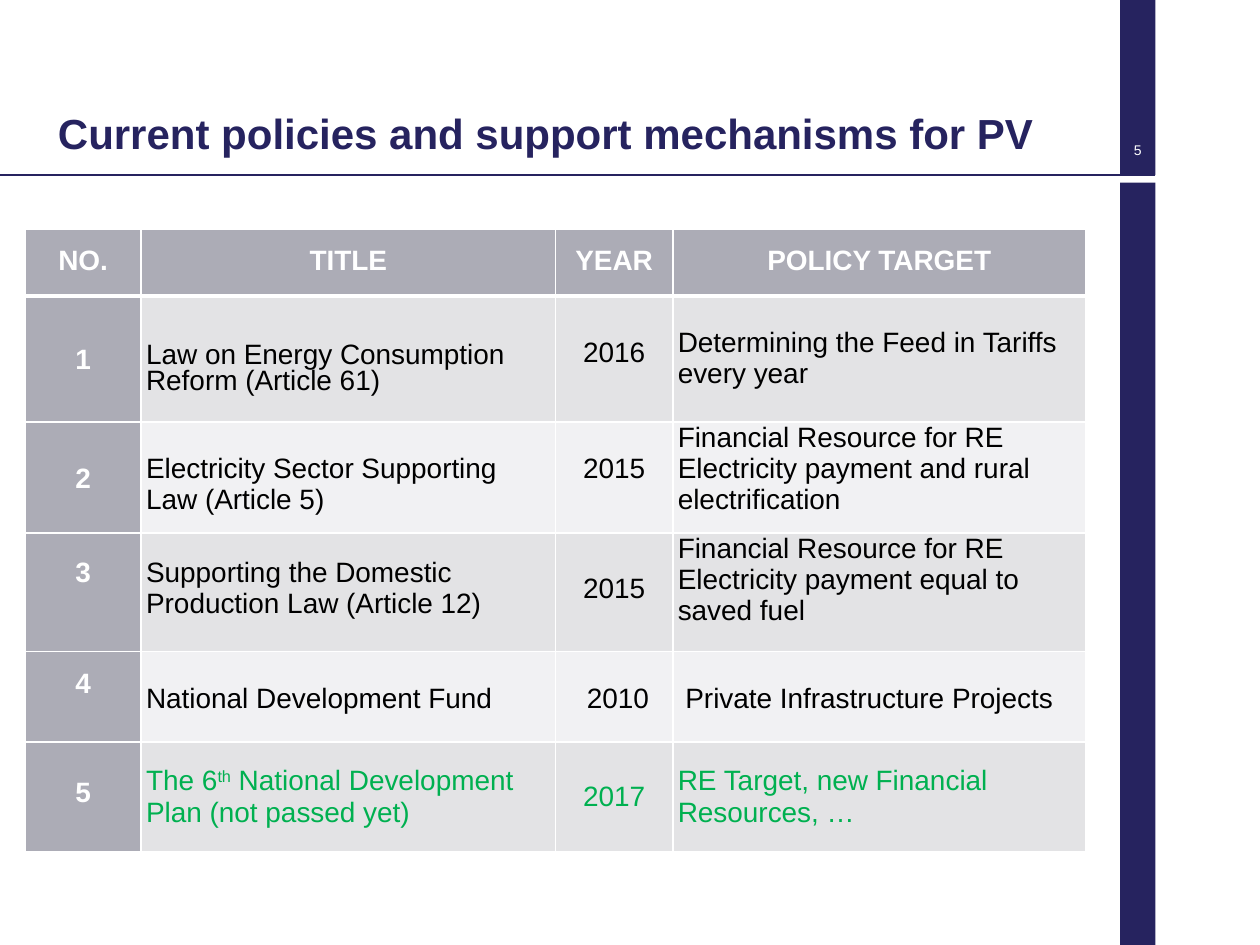
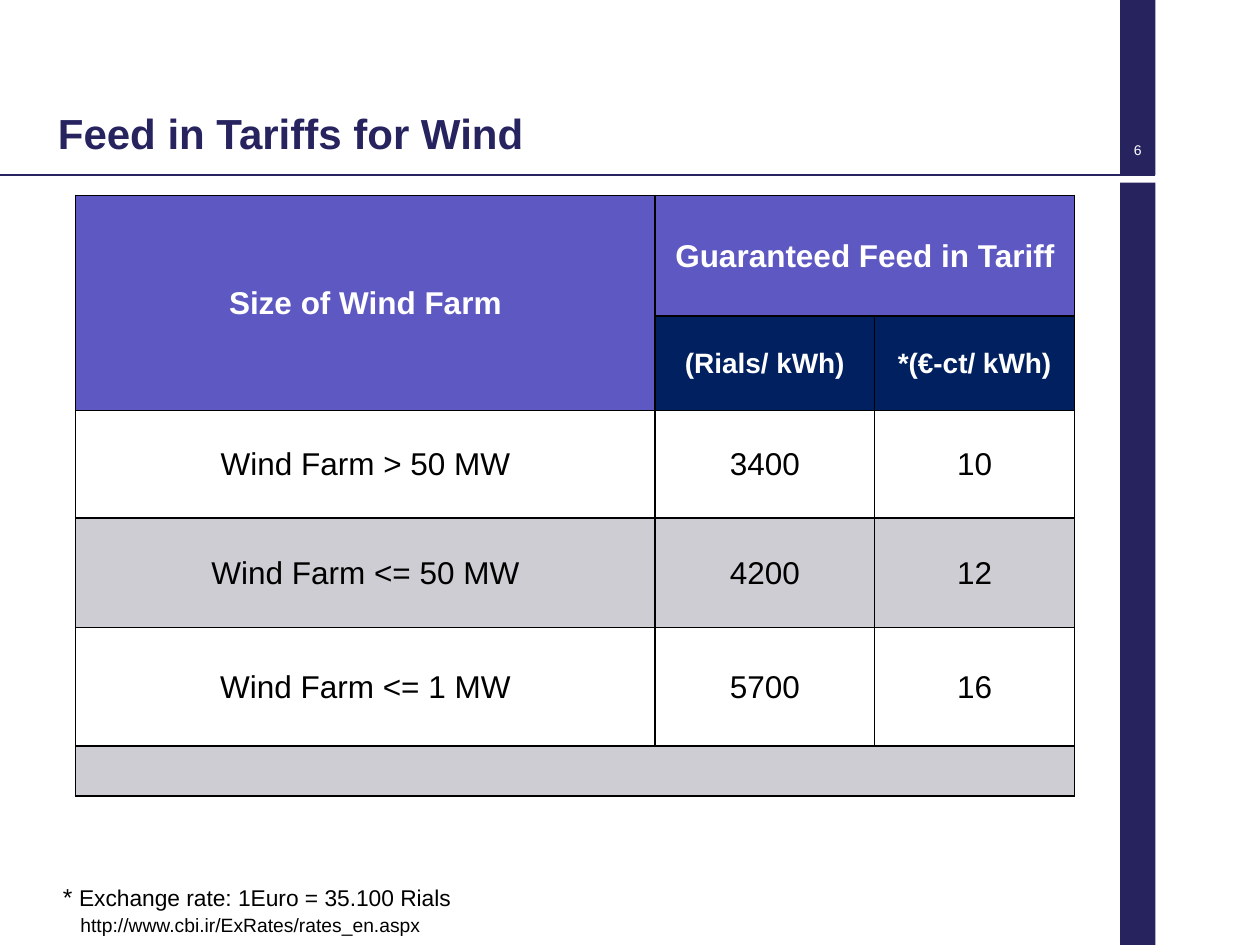
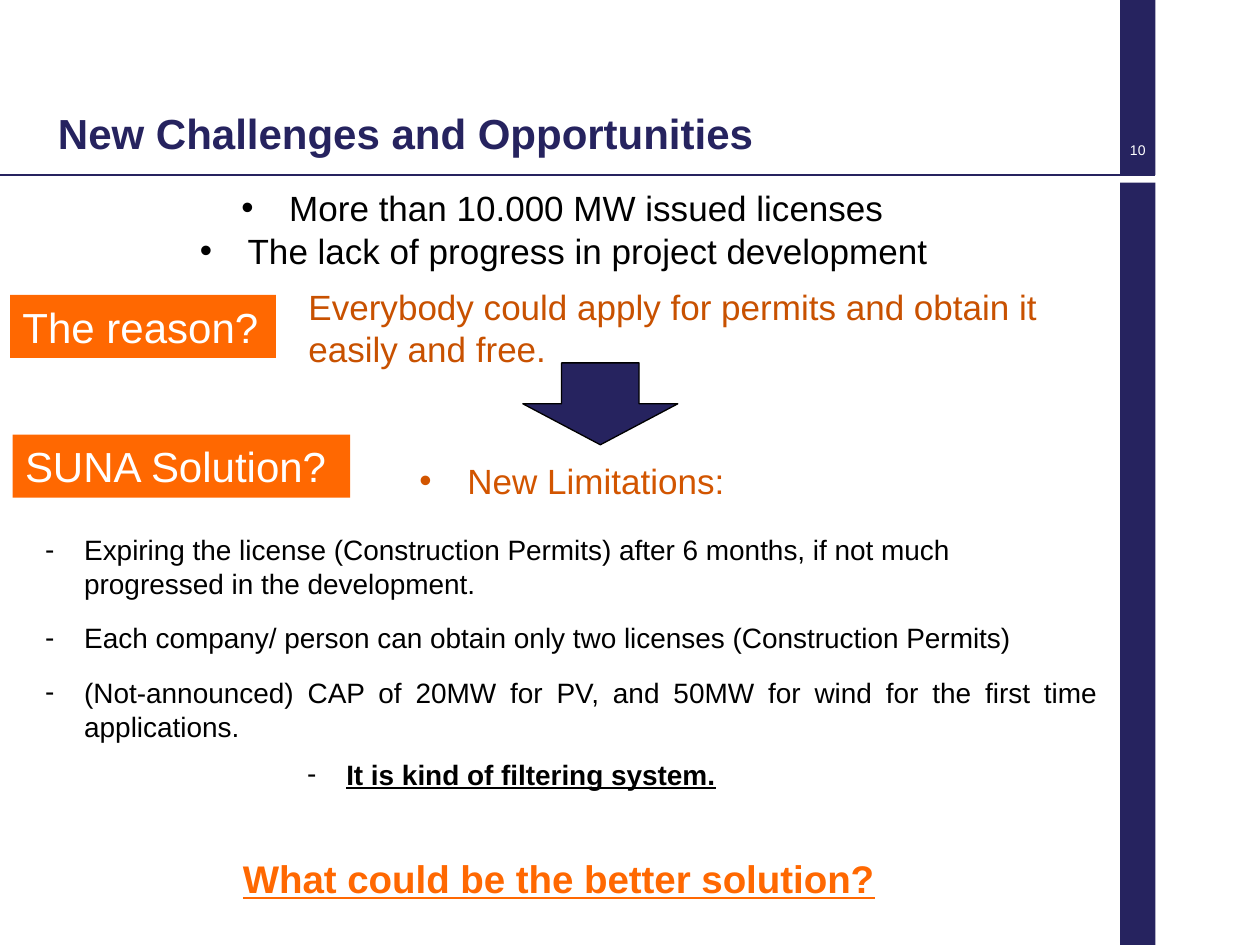
from lxml import etree
from pptx import Presentation
from pptx.dml.color import RGBColor
from pptx.enum.shapes import MSO_CONNECTOR, MSO_SHAPE
from pptx.enum.text import MSO_ANCHOR, MSO_AUTO_SIZE, PP_ALIGN
from pptx.oxml.ns import qn
from pptx.util import Inches, Pt

LEFT, MID, JUST = PP_ALIGN.LEFT, PP_ALIGN.CENTER, PP_ALIGN.JUSTIFY
TOP, CORE, LOW = MSO_ANCHOR.TOP, MSO_ANCHOR.MIDDLE, MSO_ANCHOR.BOTTOM
RECT, ARROW = MSO_SHAPE.RECTANGLE, MSO_SHAPE.DOWN_ARROW
STRAIGHT = MSO_CONNECTOR.STRAIGHT
FIXED = MSO_AUTO_SIZE.NONE

WIDE, HIGH = Inches(10), Inches(7.5)
COL, ROW = WIDE / 100, HIGH / 75
FACE = "Arial"
HUES = {
    "navy": "26235F", "white": "FFFFFF", "black": "000000",
    "head": "ACACB6", "dark": "E3E3E5", "light": "F1F1F3",
    "green": "00B050", "violet": "5E58C2", "deep": "002060",
    "grey": "CDCDD3", "flame": "FF6801", "rust": "D25500", "clay": "C85100",
}
BAND = (88.9, 2.8)
RULE = 13.9
TIGHT = 13.7


def hue(name):
    return RGBColor.from_string(HUES[name])


def place(x, y, w, h):
    return [round(v) for v in (x * COL, y * ROW, w * COL, h * ROW)]


def style(font, size, tone="black", **looks):
    looks = {"name": FACE, "size": Pt(size), **looks}
    for key, value in looks.items():
        setattr(font, key, value)
    font.color.rgb = hue(tone)


def write(para, text, size, tone="black", align=LEFT, lead=None, **looks):
    para.alignment = align
    if lead:
        para.line_spacing = lead
    for i, part in enumerate(text.split("|")):
        run = para.add_run()
        run.text = part
        style(run.font, size, tone, **looks)
        if i % 2:
            run.font._element.set("baseline", "30000")


def bullet(para, mark, hang):
    props = para._p.get_or_add_pPr()
    props.set("marL", str(Inches(hang)))
    props.set("indent", str(-Inches(hang)))
    etree.SubElement(props, qn("a:buFont")).set("typeface", FACE)
    etree.SubElement(props, qn("a:buChar")).set("char", mark)


def setup(frame, anchor=TOP, inset=None):
    looks = {"word_wrap": True, "auto_size": FIXED, "vertical_anchor": anchor}
    if inset is not None:
        for side in ("left", "top", "right", "bottom"):
            looks["margin_" + side] = Inches(inset)
    for key, value in looks.items():
        setattr(frame, key, value)


def note(slide, spot, text, size, tone="black", **looks):
    box = slide.shapes.add_textbox(*place(*spot))
    setup(box.text_frame)
    write(box.text_frame.paragraphs[0], text, size, tone, **looks)
    return box.text_frame


def points(slide, spot, items, mark, hang, size, tone="black", **looks):
    box = slide.shapes.add_textbox(*place(*spot))
    setup(box.text_frame)
    for i, (text, align) in enumerate(items):
        para = box.text_frame.add_paragraph() if i else box.text_frame.paragraphs[0]
        bullet(para, mark, hang)
        if i:
            para.space_before = Pt(12)
        write(para, text, size, tone, align, **looks)


def block(slide, kind, spot, tone, edge=None):
    shape = slide.shapes.add_shape(kind, *place(*spot))
    shape.shadow.inherit = False
    shape.fill.solid()
    shape.fill.fore_color.rgb = hue(tone)
    if edge:
        shape.line.color.rgb = hue(edge)
        shape.line.width = Pt(0.75)
    else:
        shape.line.fill.background()
    return shape


def label(slide, spot, text):
    shape = block(slide, RECT, spot, "flame")
    setup(shape.text_frame)
    write(shape.text_frame.paragraphs[0], text, 24, "white")


def start(deck, title, page):
    slide = deck.slides.add_slide(deck.slide_layouts[5])
    x, w = BAND
    block(slide, RECT, (x, 0, w, RULE), "navy")
    block(slide, RECT, (x, 14.5, w, 60.5), "navy")
    end = place(x + w, RULE, 0, 0)
    line = slide.shapes.add_connector(STRAIGHT, 0, end[1], end[0], end[1])
    line.line.color.rgb = hue("navy")
    line.line.width = Pt(1)
    etree.SubElement(line._element.spPr, qn("a:effectLst"))
    head = slide.shapes.title
    head.left, head.top, head.width, head.height = place(4.6, 0.1, 79.6, 12.4)
    setup(head.text_frame, LOW, 0)
    write(head.text_frame.paragraphs[0], title, 24, "navy", bold=True)
    box = slide.shapes.add_textbox(*place(x, 5.6, w, 7))
    setup(box.text_frame, LOW, 0)
    write(box.text_frame.paragraphs[0], page, 8, "white", MID)
    return slide


def border(cell, tone, **wide):
    props = cell._tc.get_or_add_tcPr()
    for i, side in enumerate("LRTB"):
        line = etree.Element(qn("a:ln" + side), w=str(Pt(wide.get(side, 1))))
        fill = etree.SubElement(line, qn("a:solidFill"))
        etree.SubElement(fill, qn("a:srgbClr")).set("val", HUES[tone])
        props.insert(i, line)


def grid(slide, x, y, cols, rows):
    spot = place(x, y, sum(cols), sum(rows))
    table = slide.shapes.add_table(len(rows), len(cols), *spot).table
    table.first_row = table.horz_banding = False
    for col, size in zip(table.columns, cols):
        col.width = round(size * COL)
    for row, size in zip(table.rows, rows):
        row.height = round(size * ROW)
    return table


def paint(cell, tone, side, top, anchor):
    cell.fill.solid()
    cell.fill.fore_color.rgb = hue(tone)
    cell.vertical_anchor = anchor
    cell.margin_left = cell.margin_right = Inches(side)
    cell.margin_top = Inches(top)
    cell.margin_bottom = 0


def policies(deck):
    slide = start(deck, "Current policies and support mechanisms for PV", "5")
    heads = ("NO.", "TITLE", "YEAR", "POLICY TARGET")
    rows = [
        [(text, 0, 1.5) for text in heads],
        [("1", 0.44, TIGHT),
         ("Law on Energy Consumption Reform (Article 61)", 0.38, 15),
         ("2016", 0.38, TIGHT),
         ("Determining the Feed in Tariffs every year", 0.25, 0)],
        [("2", 0.38, TIGHT),
         ("Electricity Sector Supporting Law (Article 5)", 0.25, 0),
         ("2015", 0.25, 0),
         ("Financial Resource for RE Electricity payment and rural electrification", 0, 0)],
        [("3", 0.25, TIGHT),
         ("Supporting the Domestic Production Law (Article 12)", 0.19, 0),
         ("2015", 0.38, TIGHT),
         ("Financial Resource for RE Electricity payment equal to saved fuel", 0, 0)],
        [("4", 0.19, TIGHT),
         ("National Development Fund", 0.25, 0),
         ("2010", 0.25, 0),
         ("Private Infrastructure Projects", 0.25, 0)],
        [("5", 0, TIGHT),
         ("The 6|th| National Development Plan (not passed yet)", 0, 0),
         ("2017", 0, 0),
         ("RE Target, new Financial Resources, …", 0, 0)],
    ]
    last = len(rows) - 1
    table = grid(slide, 2, 18.2, (9.2, 32.9, 9.3, 32.8), (5.3, 10, 8.8, 9.4, 7.2, 8.7))
    for r, row in enumerate(rows):
        for c, (text, top, lead) in enumerate(row):
            cell = table.cell(r, c)
            key = r == 0 or c == 0
            fill = "head" if key else "dark" if r % 2 else "light"
            tone = "white" if key else "green" if r == last else "black"
            paint(cell, fill, 0.04, top, CORE if r == last else TOP)
            if r == 4 and c > 1:
                cell.margin_left = Inches(0.1)
            border(cell, "white", T=3 if r == 1 else 1, B=1 if r else 3)
            align = MID if r == 0 or c in (0, 2) else LEFT
            write(cell.text_frame.paragraphs[0], text, 16, tone, align,
                  Pt(lead) if lead > 2 else lead, bold=key)


def tariffs(deck):
    slide = start(deck, "Feed in Tariffs for Wind", "6")
    rows = [
        ("violet", ("Size of Wind Farm", "Guaranteed Feed in Tariff", "")),
        ("deep", ("", "(Rials/ kWh)", "*(€-ct/ kWh)")),
        ("white", ("Wind Farm > 50 MW", "3400", "10")),
        ("grey", ("Wind Farm <= 50 MW", "4200", "12")),
        ("white", ("Wind Farm <= 1 MW", "5700", "16")),
        ("grey", ("", "", "")),
    ]
    table = grid(slide, 6, 15.5, (46, 17.4, 15.9), (9.6, 7.5, 8.5, 8.7, 9.4, 4))
    for r, (fill, texts) in enumerate(rows):
        for c, text in enumerate(texts):
            cell = table.cell(r, c)
            paint(cell, fill, 0.07, 0.01, CORE)
            border(cell, "black")
            if text:
                write(cell.text_frame.paragraphs[0], text, 16 if r == 1 else 18,
                      "white" if r < 2 else "black", MID, bold=r < 2)
    for first, end in (((0, 0), (1, 0)), ((0, 1), (0, 2)), ((5, 0), (5, 2))):
        table.cell(*first).merge(table.cell(*end))
    frame = note(slide, (4, 69.5, 35.6, 3.4), "* ", 14)
    write(frame.paragraphs[0], "Exchange rate: 1Euro = 35.100 Rials", 13)
    note(slide, (5.4, 72, 32.5, 2.9), "http://www.cbi.ir/ExRates/rates_en.aspx", 11)


def hurdles(deck):
    slide = start(deck, "New Challenges and Opportunities", "10")
    for spot, text, tone in (
        ((3.3, 14.3, 82.7, 4.4), "More than 10.000 MW issued licenses", "black"),
        ((5.3, 17.7, 78.9, 4.4), "The lack of progress in project development", "black"),
        ((26.8, 36, 37.2, 4.4), "New Limitations:", "rust"),
    ):
        points(slide, spot, [(text, MID)], "•", 0.38, 20, tone)
    limits = [
        ("Expiring the license (Construction Permits) after 6 months, "
         "if not much progressed in the development.", LEFT),
        ("Each company/ person can obtain only two licenses (Construction Permits)", LEFT),
        ("(Not-announced) CAP of 20MW for PV, and 50MW for wind "
         "for the first time applications.", JUST),
    ]
    points(slide, (2.6, 41.8, 85.5, 17.8), limits, "-", 0.31, 16)
    points(slide, (23.4, 59.6, 45.6, 3.7), [("It is kind of filtering system.", JUST)],
           "-", 0.31, 16, bold=True, underline=True)
    block(slide, ARROW, (41.5, 28.8, 12.3, 6.5), "navy", "black")
    note(slide, (2.6, 67.4, 83.5, 4.7), "What could be the better solution?", 22,
         "flame", align=MID, bold=True, underline=True)
    frame = note(slide, (23.5, 22.2, 61.3, 7.7),
                 "Everybody could apply for permits and obtain it", 20, "clay")
    write(frame.add_paragraph(), "easily and free.", 20, "clay")
    label(slide, (0.8, 23.4, 21.1, 5), "The reason?")
    label(slide, (1, 34.5, 26.8, 5), "SUNA Solution?")


def main():
    deck = Presentation()
    deck.slide_width, deck.slide_height = WIDE, HIGH
    for build in (policies, tariffs, hurdles):
        build(deck)
    deck.save("out.pptx")


if __name__ == "__main__":
    main()
